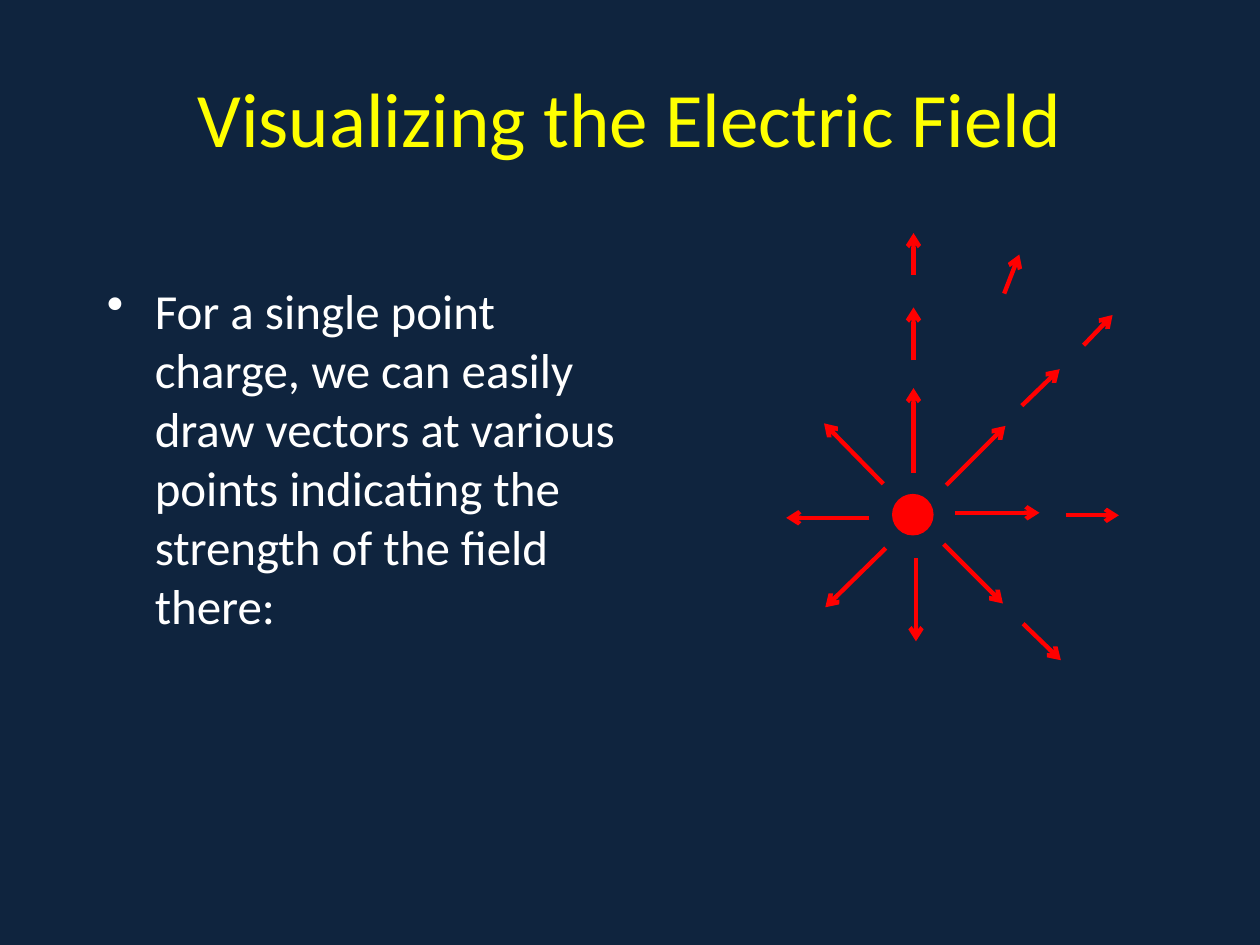
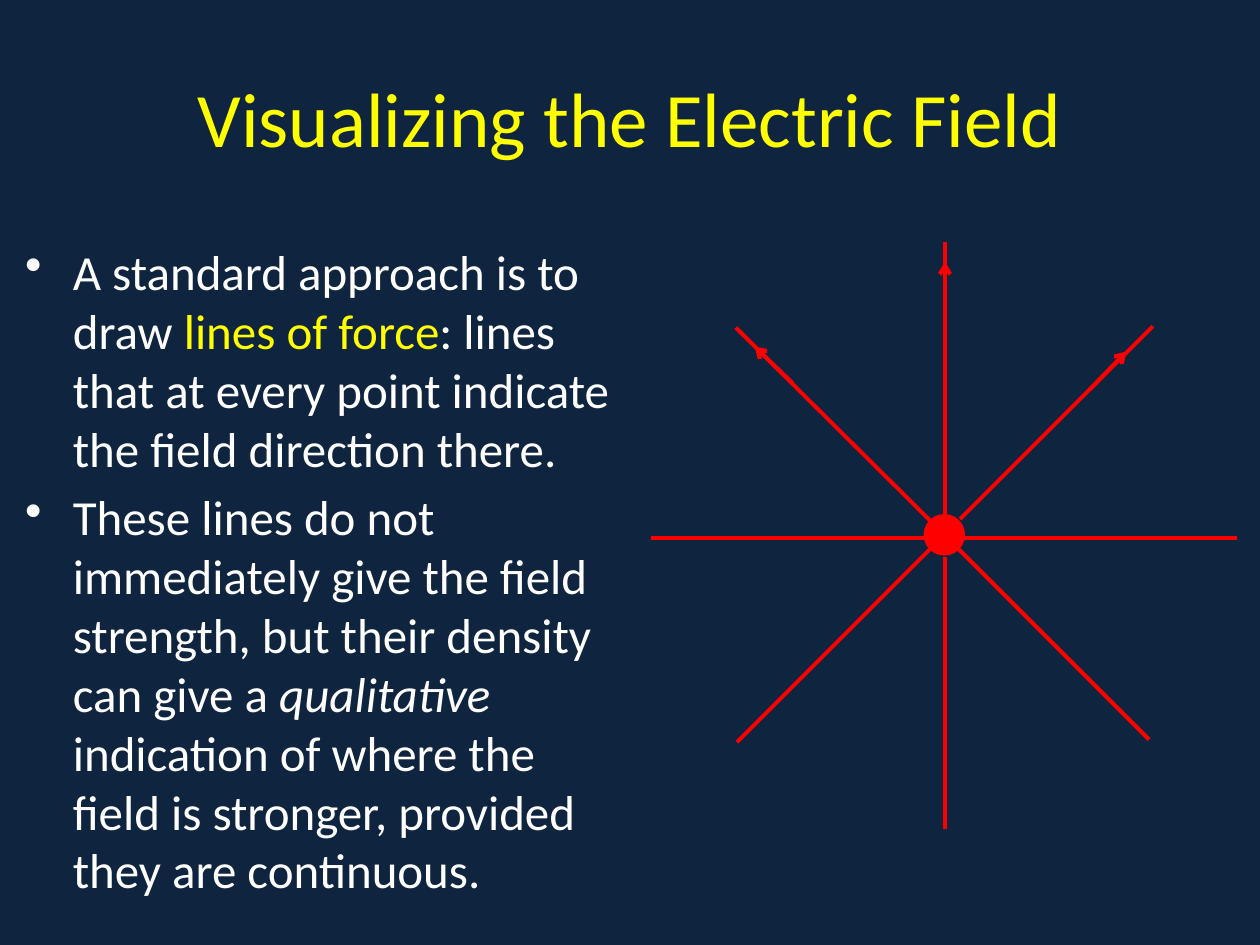
"""Build two slides that visualize the electric field of a point charge."""
from dataclasses import dataclass

from lxml.etree import SubElement
from pptx import Presentation
from pptx.dml.color import RGBColor
from pptx.enum.shapes import MSO_CONNECTOR, MSO_SHAPE
from pptx.enum.text import MSO_ANCHOR, PP_ALIGN
from pptx.oxml.ns import qn
from pptx.util import Inches, Pt


@dataclass(frozen=True)
class Theme:
    """Colours, font and type sizes shared by the slides."""
    background: RGBColor = RGBColor(0x0F, 0x24, 0x3E)
    accent: RGBColor = RGBColor(0xFF, 0xFF, 0x00)
    body: RGBColor = RGBColor(0xFF, 0xFF, 0xFF)
    field: RGBColor = RGBColor(0xFF, 0x00, 0x00)
    font: str = "Calibri"
    title_size: float = 44
    body_size: float = 28
    bullet_gap: float = 5.6
    bullet_indent: float = 0.38


@dataclass(frozen=True)
class Area:
    """Place of a box in inches."""
    left: float
    top: float
    width: float
    height: float


@dataclass(frozen=True)
class Span:
    """A piece of body text with its format."""
    text: str
    color: RGBColor | None = None
    italic: bool = False


@dataclass(frozen=True)
class FieldLine:
    """A straight line in inches, with an optional arrowhead at its end."""
    start_x: float
    start_y: float
    end_x: float
    end_y: float
    arrow: bool = True


THEME = Theme()
TITLE = "Visualizing the Electric Field"
TITLE_AREA = Area(0.5, 0.3, 9, 1.25)
CHARGE_SIZE = 0.33

VECTOR_TEXT = [
    [Span("For a single point charge, we can easily draw vectors at various "
          "points indicating the strength of the field there:")],
]
FORCE_LINE_TEXT = [
    [Span("A standard approach is to draw "),
     Span("lines of force", color=THEME.accent),
     Span(": lines that at every point indicate the field direction there.")],
    [Span("These lines do not immediately give the field strength, but their "
          "density can give a "),
     Span("qualitative", italic=True),
     Span(" indication of where the field is stronger, provided they are "
          "continuous.")],
]

NEAR_VECTORS = [
    FieldLine(7.25, 3.75, 7.25, 3.08),
    FieldLine(7.51, 3.85, 7.98, 3.38),
    FieldLine(7.58, 4.07, 8.25, 4.07),
    FieldLine(7.49, 4.32, 7.96, 4.79),
    FieldLine(7.27, 4.43, 7.27, 5.09),
    FieldLine(7.03, 4.35, 6.55, 4.82),
    FieldLine(6.9, 4.11, 6.24, 4.11),
    FieldLine(7.01, 3.84, 6.54, 3.36),
]
MIDDLE_VECTORS = [
    FieldLine(7.25, 2.86, 7.25, 2.44),
    FieldLine(8.11, 3.22, 8.41, 2.93),
    FieldLine(8.46, 4.09, 8.88, 4.09),
    FieldLine(8.12, 4.95, 8.42, 5.24),
]
FAR_VECTORS = [
    FieldLine(7.25, 2.18, 7.25, 1.85),
    FieldLine(7.97, 2.33, 8.09, 2.02),
    FieldLine(8.6, 2.74, 8.83, 2.5),
]
FORCE_LINES = [
    FieldLine(7.5, 4.08, 7.5, 1.92, arrow=False),
    FieldLine(7.62, 4.12, 9.15, 2.59, arrow=False),
    FieldLine(7.65, 4.27, 9.82, 4.27, arrow=False),
    FieldLine(9.12, 5.87, 7.58, 4.33, arrow=False),
    FieldLine(7.5, 6.58, 7.5, 4.42, arrow=False),
    FieldLine(5.85, 5.89, 7.38, 4.36, arrow=False),
    FieldLine(5.17, 4.27, 7.34, 4.27, arrow=False),
    FieldLine(7.38, 4.13, 5.84, 2.6, arrow=False),
]
DIRECTION_ARROWS = [
    FieldLine(7.5, 2.5, 7.5, 2.08),
    FieldLine(8.65, 3.09, 8.94, 2.79),
    FieldLine(6.29, 3.04, 5.99, 2.75),
]


def add_box(page, area: Area, anchor=MSO_ANCHOR.TOP):
    """Add a wrapping text box and return its text frame."""
    box = page.shapes.add_textbox(Inches(area.left), Inches(area.top),
                                  Inches(area.width), Inches(area.height))
    frame = box.text_frame
    frame.word_wrap = True
    frame.vertical_anchor = anchor
    return frame


def add_text(para, text: str, *, size: float, color: RGBColor,
             italic: bool = False) -> None:
    """Add formatted text to a paragraph."""
    span = para.add_run()
    span.text = text
    span.font.name = THEME.font
    span.font.size = Pt(size)
    span.font.color.rgb = color
    span.font.italic = italic


def add_title(page) -> None:
    """Add the shared slide title."""
    para = add_box(page, TITLE_AREA, MSO_ANCHOR.MIDDLE).paragraphs[0]
    para.alignment = PP_ALIGN.CENTER
    add_text(para, TITLE, size=THEME.title_size, color=THEME.accent)


def set_bullet(para) -> None:
    """Give a paragraph a hanging bullet."""
    para.space_before = Pt(THEME.bullet_gap)
    properties = para._p.get_or_add_pPr()
    indent = Inches(THEME.bullet_indent)
    properties.set("marL", str(indent))
    properties.set("indent", str(-indent))
    SubElement(properties, qn("a:buChar"), char="•")


def add_bullets(page, area: Area, bullets: list[list[Span]]) -> None:
    """Add the bulleted body text."""
    frame = add_box(page, area)
    for index, spans in enumerate(bullets):
        para = frame.add_paragraph() if index else frame.paragraphs[0]
        set_bullet(para)
        for span in spans:
            add_text(para, span.text, size=THEME.body_size,
                     color=span.color or THEME.body, italic=span.italic)


def add_charge(page, left: float, top: float) -> None:
    """Add the point charge."""
    charge = page.shapes.add_shape(MSO_SHAPE.OVAL, Inches(left), Inches(top),
                                   Inches(CHARGE_SIZE), Inches(CHARGE_SIZE))
    charge.shadow.inherit = False
    charge.fill.solid()
    charge.fill.fore_color.rgb = THEME.field
    charge.line.fill.background()


def add_field_lines(page, lines: list[FieldLine], weight: float) -> None:
    """Draw field lines of one weight."""
    for line in lines:
        connector = page.shapes.add_connector(
            MSO_CONNECTOR.STRAIGHT, Inches(line.start_x), Inches(line.start_y),
            Inches(line.end_x), Inches(line.end_y))
        connector.line.color.rgb = THEME.field
        connector.line.width = Pt(weight)
        if line.arrow:
            SubElement(connector.line._get_or_add_ln(), qn("a:tailEnd"),
                       type="arrow")
        SubElement(connector._element.spPr, qn("a:effectLst"))


def add_page(deck, area: Area, bullets: list[list[Span]]):
    """Add a slide with the shared background, title and body text."""
    page = deck.slides.add_slide(deck.slide_layouts[6])
    page.background.fill.solid()
    page.background.fill.fore_color.rgb = THEME.background
    add_title(page)
    add_bullets(page, area, bullets)
    return page


def main() -> None:
    """Build and save the deck."""
    deck = Presentation()
    deck.slide_width = Inches(10)
    deck.slide_height = Inches(7.5)

    vectors = add_page(deck, Area(0.75, 2.18, 4.42, 4.95), VECTOR_TEXT)
    add_charge(vectors, 7.08, 3.92)
    add_field_lines(vectors, NEAR_VECTORS + MIDDLE_VECTORS + FAR_VECTORS, 2.5)

    force = add_page(deck, Area(0.1, 1.87, 4.92, 5.33), FORCE_LINE_TEXT)
    add_charge(force, 7.33, 4.08)
    add_field_lines(force, FORCE_LINES + DIRECTION_ARROWS, 2.25)

    deck.save("out.pptx")


if __name__ == "__main__":
    main()
